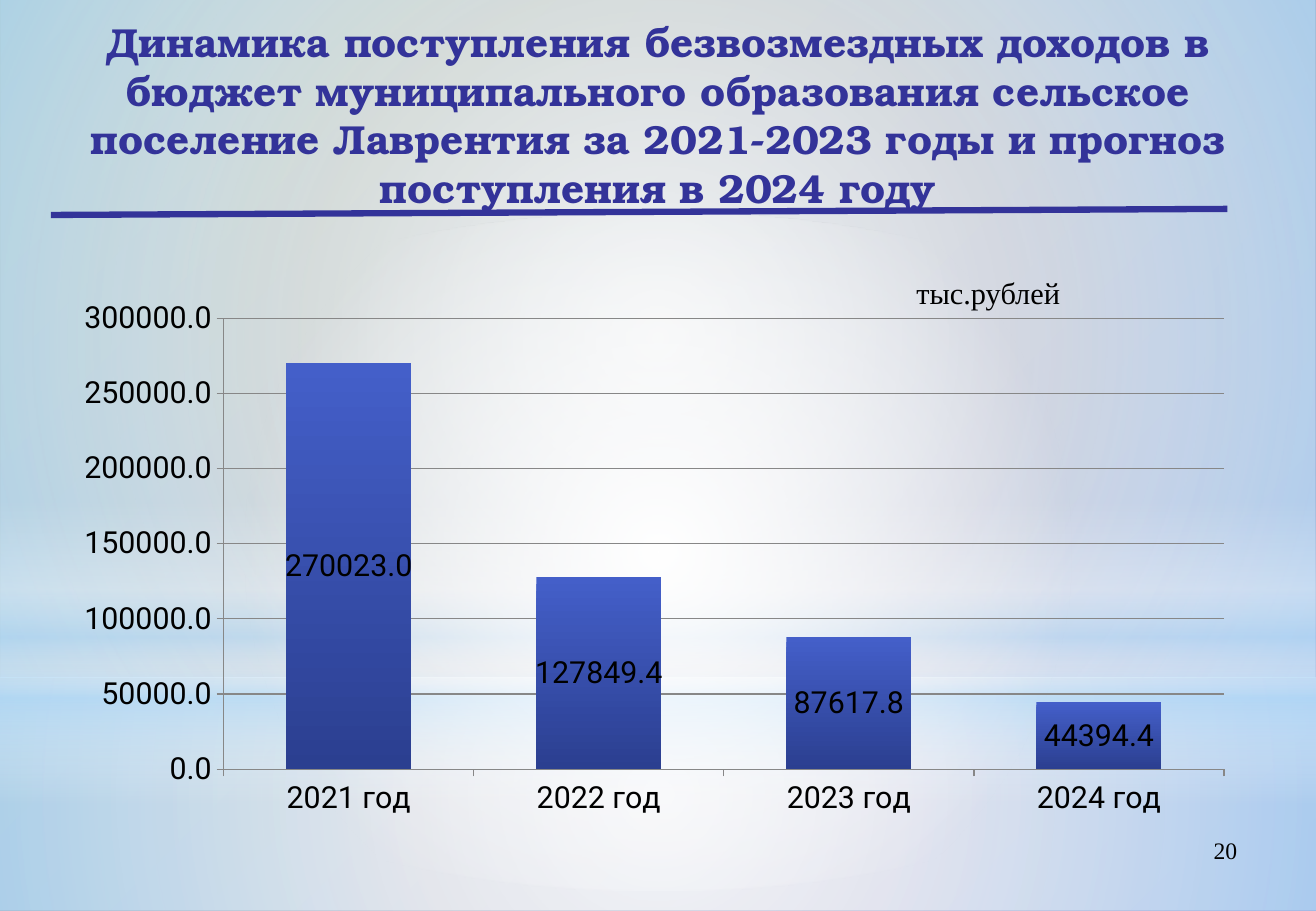
"""Build the slide on non-repayable budget income for 2021-2024."""
from dataclasses import dataclass

from lxml.etree import SubElement
from pptx import Presentation
from pptx.chart.data import CategoryChartData
from pptx.dml.color import RGBColor
from pptx.enum.chart import XL_CHART_TYPE, XL_LABEL_POSITION, XL_TICK_MARK
from pptx.enum.shapes import MSO_CONNECTOR, MSO_SHAPE
from pptx.enum.text import MSO_ANCHOR, PP_ALIGN
from pptx.oxml.ns import qn
from pptx.util import Inches, Pt


@dataclass(frozen=True)
class Theme:
    accent: str = "333399"
    text: str = "000000"
    grid: str = "878787"
    white: str = "FFFFFF"
    sky: str = "B4DCFA"
    background_start: str = "96AB94"
    background_end: str = "8488C4"
    bar_top: str = "445FC9"
    bar_bottom: str = "2B3F90"
    title_font: str = "TeX Gyre Bonum"
    body_font: str = "Times New Roman"
    chart_font: str = "Roboto"
    title_size: int = 24
    chart_size: int = 18
    number_size: int = 14


theme = Theme()


def set_gradient(fill, owner, stops, angle=None):
    """Fill with (position, colour, opacity) stops; no angle means circular."""
    fill.gradient()
    gradient = next(owner.iter(qn("a:gradFill")))
    for child in list(gradient):
        gradient.remove(child)
    stop_list = SubElement(gradient, qn("a:gsLst"))
    for position, color, opacity in stops:
        stop = SubElement(stop_list, qn("a:gs"), pos=str(position * 1000))
        value = SubElement(stop, qn("a:srgbClr"), val=color)
        if opacity < 100:
            SubElement(value, qn("a:alpha"), val=str(opacity * 1000))
    if angle is None:
        center = SubElement(gradient, qn("a:path"), path="circle")
        SubElement(center, qn("a:fillToRect"), l="50000", t="50000", r="50000", b="50000")
    else:
        SubElement(gradient, qn("a:lin"), ang=str(angle * 60000), scaled="0")


def add_text(box, text, font_name, size, color, alignment, bold=False):
    """Add a text box with a single formatted run."""
    frame = slide.shapes.add_textbox(*map(Inches, box)).text_frame
    frame.word_wrap = True
    paragraph = frame.paragraphs[0]
    paragraph.alignment = alignment
    run = paragraph.add_run()
    run.text = text
    run.font.name = font_name
    run.font.size = Pt(size)
    run.font.bold = bold
    run.font.color.rgb = RGBColor.from_string(color)
    return frame


presentation = Presentation()
presentation.slide_width = Inches(10.84)
presentation.slide_height = Inches(7.5)
slide = presentation.slides.add_slide(presentation.slide_layouts[6])
set_gradient(
    slide.background.fill,
    slide.element,
    [(0, theme.background_start, 100), (100, theme.background_end, 100)],
    45,
)

backdrop = [
    (MSO_SHAPE.RECTANGLE, 5.58, 1.92, None,
     [(0, theme.white, 91), (37, theme.white, 76), (100, theme.sky, 79)]),
    (MSO_SHAPE.RECTANGLE, 0, 5.58, None,
     [(0, theme.white, 89), (48, theme.white, 62), (100, theme.sky, 79)]),
    (MSO_SHAPE.RECTANGLE, 4.12, 2.5, 90,
     [(0, theme.white, 0), (29, theme.white, 30), (45, theme.sky, 40),
      (55, theme.white, 26), (65, theme.sky, 60), (100, theme.white, 0)]),
    (MSO_SHAPE.OVAL, 1.75, 5.58, None,
     [(0, theme.white, 100), (56, theme.white, 0)]),
]
for kind, top, height, angle, stops in backdrop:
    shape = slide.shapes.add_shape(
        kind, 0, Inches(top), presentation.slide_width, Inches(height)
    )
    shape.shadow.inherit = False
    shape.line.fill.background()
    set_gradient(shape.fill, shape.element, stops, angle)

add_text((7.76, 6.83, 2.53, 0.52), "20", theme.body_font, theme.number_size,
         theme.text, PP_ALIGN.RIGHT)

title = add_text(
    (0, 0.14, 10.84, 1.6),
    "Динамика поступления безвозмездных доходов в бюджет муниципального "
    "образования сельское поселение Лаврентия за 2021-2023 годы и прогноз "
    "поступления в 2024 году",
    theme.title_font, theme.title_size, theme.accent, PP_ALIGN.CENTER, True,
)
title.vertical_anchor = MSO_ANCHOR.MIDDLE

rule = slide.shapes.add_connector(
    MSO_CONNECTOR.STRAIGHT, Inches(0.42), Inches(1.77), Inches(10.11), Inches(1.72)
)
rule.line.color.rgb = RGBColor.from_string(theme.accent)
rule.line.width = Pt(3.75)
SubElement(rule.element.spPr, qn("a:effectLst"))

income = CategoryChartData(number_format="0.0")
income.categories = [f"{year} год" for year in range(2021, 2025)]
income.add_series("Series 1", (270023, 127849.4, 87617.8, 44394.4))
chart = slide.shapes.add_chart(
    XL_CHART_TYPE.COLUMN_STACKED,
    Inches(0.47), Inches(2.4), Inches(9.81), Inches(4.42), income,
).chart
chart.has_legend = False
chart.has_title = False
chart.font.name = theme.chart_font
chart.font.size = Pt(theme.chart_size)
chart.font.color.rgb = RGBColor.from_string(theme.text)

plot = chart.plots[0]
plot.gap_width = 100
plot.overlap = 100
plot.vary_by_categories = False
plot.has_data_labels = True
labels = plot.data_labels
labels.show_value = True
labels.number_format = "0.0"
labels.number_format_is_linked = False
labels.position = XL_LABEL_POSITION.CENTER

series = plot.series[0]
set_gradient(
    series.format.fill,
    chart.element,
    [(0, theme.bar_top, 100), (100, theme.bar_bottom, 100)],
    90,
)

value_axis = chart.value_axis
value_axis.minimum_scale = 0
value_axis.maximum_scale = 300000
value_axis.major_unit = 50000
value_axis.has_major_gridlines = True
value_axis.tick_labels.number_format = "0.0"
value_axis.tick_labels.number_format_is_linked = False
for axis in (chart.category_axis, value_axis):
    axis.major_tick_mark = XL_TICK_MARK.OUTSIDE
    axis.minor_tick_mark = XL_TICK_MARK.NONE
for item in (chart.category_axis, value_axis, value_axis.major_gridlines):
    item.format.line.color.rgb = RGBColor.from_string(theme.grid)
    item.format.line.width = Pt(0.75)

plot_area = next(chart.element.iter(qn("c:plotArea")))
for old_layout in plot_area.findall(qn("c:layout")):
    plot_area.remove(old_layout)
layout = SubElement(plot_area, qn("c:layout"))
plot_area.insert(0, layout)
manual = SubElement(layout, qn("c:manualLayout"))
for tag, value in (
    ("layoutTarget", "inner"), ("xMode", "edge"), ("yMode", "edge"),
    ("x", "0.14"), ("y", "0.05"), ("w", "0.84"), ("h", "0.84"),
):
    SubElement(manual, qn(f"c:{tag}"), val=value)

add_text((7.45, 2.21, 1.4, 0.4), "тыс.рублей", theme.body_font, theme.chart_size,
         theme.text, PP_ALIGN.LEFT)

presentation.save("out.pptx")
